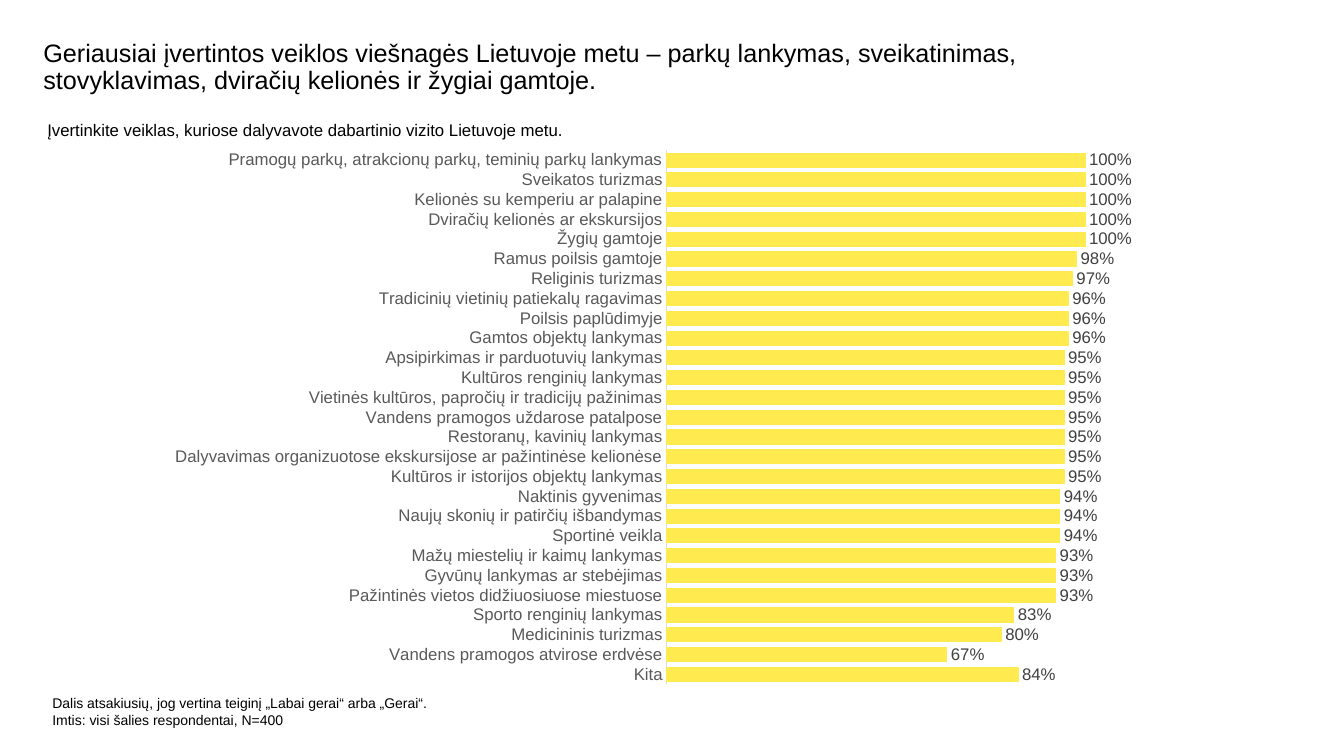
from dataclasses import dataclass

from lxml import etree
from pptx import Presentation
from pptx.chart.data import CategoryChartData
from pptx.dml.color import RGBColor
from pptx.enum import chart as charts, text
from pptx.util import Pt

FONT = "Arial"
BLACK, YELLOW = "000000", "FFEB50"
AXIS_TEXT, AXIS_LINE, LABEL_TEXT = "595959", "D9D9D9", "404040"


@dataclass(frozen=True)
class Frame:
    left: float
    top: float
    width: float
    height: float

    def lengths(self):
        return [Pt(value) for value in (self.left, self.top, self.width, self.height)]


@dataclass(frozen=True)
class Note:
    frame: Frame
    size: float
    lines: tuple[str, ...]


@dataclass(frozen=True)
class Rating:
    activity: str
    percent: int


TITLE = Note(Frame(31, 28.8, 808, 43.2), 18, (
    "Geriausiai įvertintos veiklos viešnagės Lietuvoje metu – parkų lankymas, sveikatinimas, "
    "stovyklavimas, dviračių kelionės ir žygiai gamtoje.",))
NOTES = (
    Note(Frame(33.8, 85.7, 856, 44), 12,
         ("Įvertinkite veiklas, kuriose dalyvavote dabartinio vizito Lietuvoje metu.",)),
    Note(Frame(37.4, 496, 278, 31.7), 10,
         ("Dalis atsakiusių, jog vertina teiginį „Labai gerai“ arba „Gerai“.",
          "Imtis: visi šalies respondentai, N=400")),
)
CHART_FRAME = Frame(110.9, 99.4, 738, 397.4)
PLOT_SHARE = {"x": 0.495, "y": 0.02, "w": 0.486, "h": 0.96}

# Bottom bar first
RATINGS = (
    Rating("Kita", 84),
    Rating("Vandens pramogos atvirose erdvėse", 67),
    Rating("Medicininis turizmas", 80),
    Rating("Sporto renginių lankymas", 83),
    Rating("Pažintinės vietos didžiuosiuose miestuose", 93),
    Rating("Gyvūnų lankymas ar stebėjimas", 93),
    Rating("Mažų miestelių ir kaimų lankymas", 93),
    Rating("Sportinė veikla", 94),
    Rating("Naujų skonių ir patirčių išbandymas", 94),
    Rating("Naktinis gyvenimas", 94),
    Rating("Kultūros ir istorijos objektų lankymas", 95),
    Rating("Dalyvavimas organizuotose ekskursijose ar pažintinėse kelionėse", 95),
    Rating("Restoranų, kavinių lankymas", 95),
    Rating("Vandens pramogos uždarose patalpose", 95),
    Rating("Vietinės kultūros, papročių ir tradicijų pažinimas", 95),
    Rating("Kultūros renginių lankymas", 95),
    Rating("Apsipirkimas ir parduotuvių lankymas", 95),
    Rating("Gamtos objektų lankymas", 96),
    Rating("Poilsis paplūdimyje", 96),
    Rating("Tradicinių vietinių patiekalų ragavimas", 96),
    Rating("Religinis turizmas", 97),
    Rating("Ramus poilsis gamtoje", 98),
    Rating("Žygių gamtoje", 100),
    Rating("Dviračių kelionės ar ekskursijos", 100),
    Rating("Kelionės su kemperiu ar palapine", 100),
    Rating("Sveikatos turizmas", 100),
    Rating("Pramogų parkų, atrakcionų parkų, teminių parkų lankymas", 100),
)


def apply(target, **values) -> None:
    for name, value in values.items():
        setattr(target, name, value)


def paint(color_format, color: str) -> None:
    color_format.rgb = RGBColor.from_string(color)


def style_font(font, size: float, color: str) -> None:
    apply(font, name=FONT, size=Pt(size), bold=False)
    paint(font.color, color)


def style_line(line, color: str) -> None:
    line.width = Pt(0.75)
    paint(line.color, color)


def write_note(box, note: Note) -> None:
    left, top, width, height = note.frame.lengths()
    apply(box, left=left, top=top, width=width, height=height)
    frame = box.text_frame
    apply(frame, margin_left=0, margin_top=0, margin_right=0, margin_bottom=0,
          word_wrap=True, auto_size=text.MSO_AUTO_SIZE.NONE,
          vertical_anchor=text.MSO_ANCHOR.TOP)
    frame.text = "\n".join(note.lines)
    for para in frame.paragraphs:
        para.alignment = text.PP_ALIGN.LEFT
        for span in para.runs:
            style_font(span.font, note.size, BLACK)


def fix_plot_area(chart) -> None:
    """Pin the inner plot area to fixed shares of the chart frame."""
    area = chart.plots[0]._element.getparent()
    namespace = etree.QName(area).namespace
    for old in area.findall(f"{{{namespace}}}layout"):
        area.remove(old)
    layout = etree.Element(f"{{{namespace}}}layout")
    manual = etree.SubElement(layout, f"{{{namespace}}}manualLayout")
    settings = {"layoutTarget": "inner", "xMode": "edge", "yMode": "edge", **PLOT_SHARE}
    for name, value in settings.items():
        etree.SubElement(manual, f"{{{namespace}}}{name}", val=str(value))
    area.insert(0, layout)


def add_rating_chart(page) -> None:
    data = CategoryChartData(number_format="0%")
    data.categories = [rating.activity for rating in RATINGS]
    data.add_series("Series 1", [rating.percent / 100 for rating in RATINGS])
    chart = page.shapes.add_chart(
        charts.XL_CHART_TYPE.BAR_CLUSTERED, *CHART_FRAME.lengths(), data).chart
    apply(chart, has_legend=False, has_title=False)
    style_font(chart.font, 10, BLACK)

    axis = chart.category_axis
    apply(axis, major_tick_mark=charts.XL_TICK_MARK.NONE, has_major_gridlines=False)
    style_font(axis.tick_labels.font, 12, AXIS_TEXT)
    style_line(axis.format.line, AXIS_LINE)
    apply(chart.value_axis, minimum_scale=0, maximum_scale=1.2,
          has_major_gridlines=False, visible=False)

    plot = chart.plots[0]
    apply(plot, gap_width=40, vary_by_categories=False, has_data_labels=True)
    apply(plot.data_labels, show_value=True, number_format="0%",
          number_format_is_linked=False, position=charts.XL_LABEL_POSITION.OUTSIDE_END)
    style_font(plot.data_labels.font, 12, LABEL_TEXT)
    bars = plot.series[0].format
    bars.fill.solid()
    paint(bars.fill.fore_color, YELLOW)
    style_line(bars.line, YELLOW)
    fix_plot_area(chart)


def main() -> None:
    deck = Presentation()
    apply(deck, slide_width=Pt(960), slide_height=Pt(540))
    page = deck.slides.add_slide(deck.slide_layouts.get_by_name("Title Only"))
    write_note(page.shapes.title, TITLE)
    page.shapes.title.text_frame.paragraphs[0].line_spacing = 0.9
    for note in NOTES:
        write_note(page.shapes.add_textbox(*note.frame.lengths()), note)
    add_rating_chart(page)
    deck.save("out.pptx")


if __name__ == "__main__":
    main()
